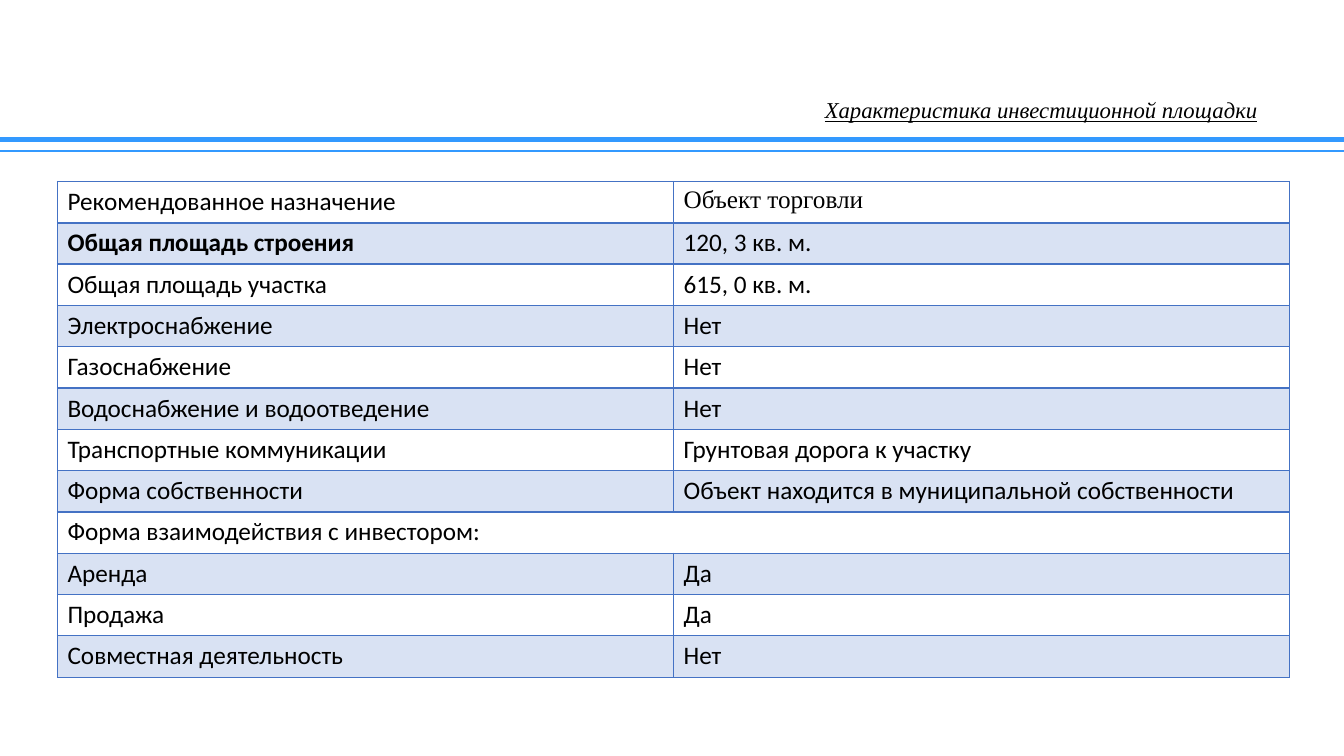
from dataclasses import dataclass

from lxml import etree
from pptx import Presentation
from pptx.dml.color import RGBColor
from pptx.enum.shapes import MSO_CONNECTOR
from pptx.enum.text import MSO_ANCHOR, PP_ALIGN
from pptx.oxml.ns import qn
from pptx.slide import Slide
from pptx.table import _Cell
from pptx.util import Inches, Pt

STRAIGHT = MSO_CONNECTOR.STRAIGHT
MIDDLE = MSO_ANCHOR.MIDDLE
CENTER = PP_ALIGN.CENTER

BLACK = RGBColor(0x00, 0x00, 0x00)
RULE_BLUE = RGBColor(0x33, 0x99, 0xFF)
TABLE_BLUE = RGBColor(0x44, 0x72, 0xC4)
SANS = "Calibri"
SERIF = "Times New Roman"

SLIDE_WIDTH = 13.33
ROW_HEIGHT = 0.41
COLUMN_WIDTH = 6.11
BAND_OPACITY = 20


@dataclass(frozen=True)
class Rule:
    top: float
    weight: float


@dataclass(frozen=True)
class SiteRow:
    label: str
    value: str | None
    bold_label: bool = False
    value_font: str = SANS


RULES = [Rule(1.38, 3.5), Rule(1.5, 1.5)]

SITE_ROWS = [
    SiteRow("Рекомендованное назначение", "Объект торговли", value_font=SERIF),
    SiteRow("Общая площадь строения", "120, 3 кв. м.", bold_label=True),
    SiteRow("Общая площадь участка", "615, 0 кв. м."),
    SiteRow("Электроснабжение", "Нет"),
    SiteRow("Газоснабжение", "Нет"),
    SiteRow("Водоснабжение и водоотведение", "Нет"),
    SiteRow("Транспортные коммуникации", "Грунтовая дорога к участку"),
    SiteRow("Форма собственности", "Объект находится в муниципальной собственности"),
    SiteRow("Форма взаимодействия с инвестором:", None),
    SiteRow("Аренда", "Да"),
    SiteRow("Продажа", "Да"),
    SiteRow("Совместная деятельность", "Нет"),
]


def add_rule(page: Slide, rule: Rule) -> None:
    line = page.shapes.add_connector(
        STRAIGHT, 0, Inches(rule.top), Inches(SLIDE_WIDTH), Inches(rule.top)
    )
    line.line.color.rgb = RULE_BLUE
    line.line.width = Pt(rule.weight)
    etree.SubElement(line._element.spPr, qn("a:effectLst"))


def add_title(page: Slide) -> None:
    box = page.shapes.add_textbox(Inches(7.86), Inches(0.97), Inches(4.93), Inches(0.27))
    frame = box.text_frame
    frame.word_wrap = True
    frame.vertical_anchor = MIDDLE
    frame.text = "Характеристика инвестиционной площадки"
    para = frame.paragraphs[0]
    para.alignment = CENTER
    para.line_spacing = 0.9
    font = para.runs[0].font
    font.name = SERIF
    font.size = Pt(16.2)
    font.italic = True
    font.underline = True
    font.color.rgb = BLACK


def write_cell(cell: _Cell, text: str, font_name: str, bold: bool) -> None:
    cell.text = text
    font = cell.text_frame.paragraphs[0].runs[0].font
    font.name = font_name
    font.size = Pt(18)
    font.bold = bold
    font.color.rgb = BLACK


def paint_cell(cell: _Cell, banded: bool, bottom_weight: float) -> None:
    """Fill the cell, then put its four borders ahead of the fill."""
    properties = cell._tc.get_or_add_tcPr()
    if banded:
        cell.fill.solid()
        cell.fill.fore_color.rgb = TABLE_BLUE
        color = properties.find(".//" + qn("a:srgbClr"))
        etree.SubElement(color, qn("a:alpha"), val=str(BAND_OPACITY * 1000))
    else:
        cell.fill.background()
    weights = {"lnL": 1, "lnR": 1, "lnT": 1, "lnB": bottom_weight}
    for position, (side, weight) in enumerate(weights.items()):
        border = etree.Element(qn("a:" + side), w=str(Pt(weight)))
        solid = etree.SubElement(border, qn("a:solidFill"))
        etree.SubElement(solid, qn("a:srgbClr"), val=str(TABLE_BLUE))
        properties.insert(position, border)


def add_site_table(page: Slide) -> None:
    table = page.shapes.add_table(
        len(SITE_ROWS), 2, Inches(0.57), Inches(1.8),
        Inches(2 * COLUMN_WIDTH), Inches(len(SITE_ROWS) * ROW_HEIGHT),
    ).table
    table.first_row = False
    table.horz_banding = False
    for index, row in enumerate(SITE_ROWS):
        table.rows[index].height = Inches(ROW_HEIGHT)
        label_cell, value_cell = table.cell(index, 0), table.cell(index, 1)
        write_cell(label_cell, row.label, SANS, row.bold_label)
        if row.value is None:
            label_cell.merge(value_cell)
        else:
            write_cell(value_cell, row.value, row.value_font, False)
        for cell in (label_cell, value_cell):
            paint_cell(cell, banded=index % 2 == 1, bottom_weight=2 if index == 0 else 1)


def main() -> None:
    deck = Presentation()
    deck.slide_width = Inches(SLIDE_WIDTH)
    deck.slide_height = Inches(7.5)
    page = deck.slides.add_slide(deck.slide_layouts[6])
    for rule in RULES:
        add_rule(page, rule)
    add_title(page)
    add_site_table(page)
    deck.save("out.pptx")


if __name__ == "__main__":
    main()
